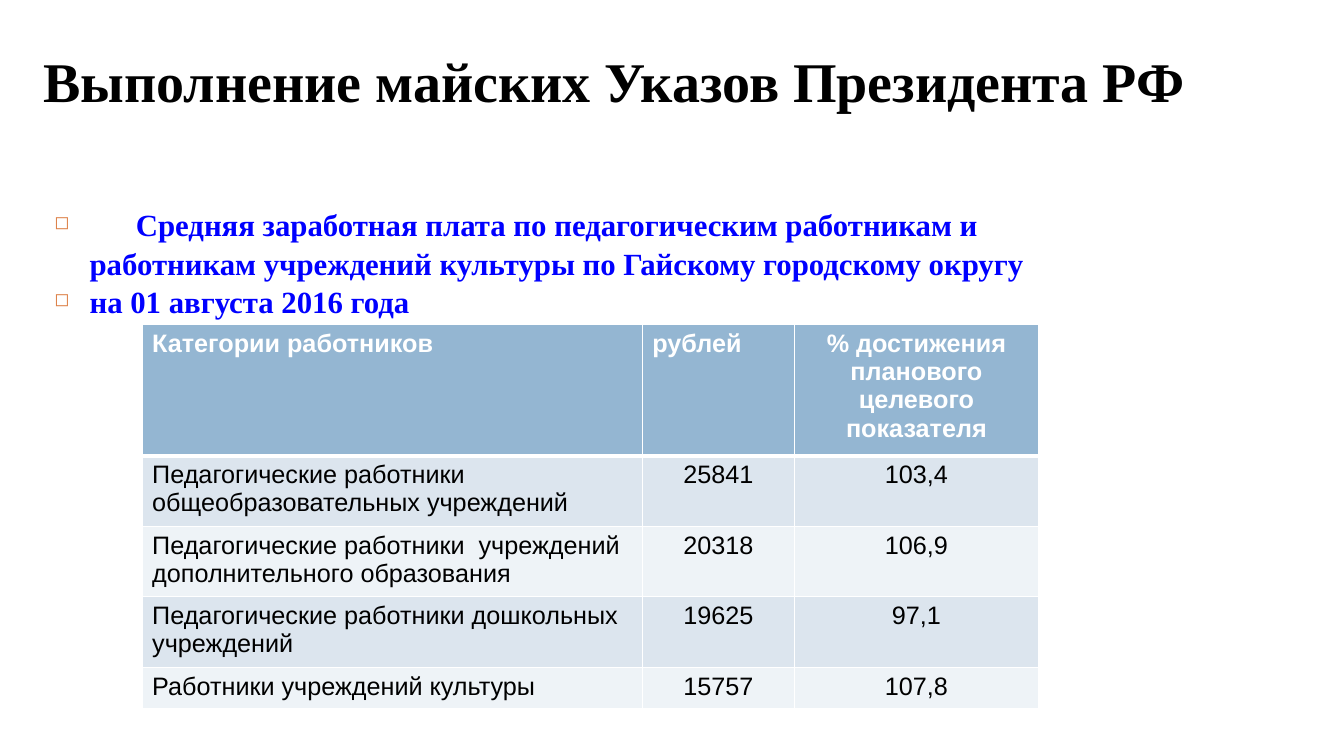
from lxml import etree
from pptx import Presentation
from pptx.dml.color import RGBColor
from pptx.enum.text import MSO_ANCHOR, PP_ALIGN
from pptx.oxml.ns import qn
from pptx.util import Inches, Pt

TITLE = "Выполнение майских Указов Президента РФ"
SUBTITLE = [
    "\tСредняя заработная плата по педагогическим работникам и работникам "
    "учреждений культуры по Гайскому городскому округу",
    "на 01 августа 2016 года",
]
ROWS = [
    ("Категории работников", "рублей", "% достижения планового целевого показателя"),
    ("Педагогические работники общеобразовательных учреждений", "25841", "103,4"),
    ("Педагогические работники  учреждений дополнительного образования", "20318", "106,9"),
    ("Педагогические работники дошкольных учреждений", "19625", "97,1"),
    ("Работники учреждений культуры", "15757", "107,8"),
]
COL_WIDTHS = [4.96, 1.51, 2.42]
ROW_HEIGHTS = [1.21, 0.67, 0.67, 0.67, 0.41]
HEADER_FILL, BAND_FILLS = "94B6D2", ("EEF3F7", "DCE5EE")
TITLE_FONT = dict(name="Times New Roman", size=Pt(40), bold=True)
SUBTITLE_FONT = dict(name="Times New Roman", size=Pt(22), bold=True)
HEADER_FONT = dict(name="Arial", size=Pt(18), bold=True)
CELL_FONT = dict(name="Arial", size=Pt(18), bold=False)


def rgb(value):
    return RGBColor.from_string(value)


def write(p, text, font, color):
    r = p.add_run()
    r.text = text
    for key, value in font.items():
        setattr(r.font, key, value)
    r.font.color.rgb = rgb(color)


def add_text(s, left, top, width, height, anchor):
    tf = s.shapes.add_textbox(*map(Inches, (left, top, width, height))).text_frame
    tf.word_wrap = True
    tf.vertical_anchor = anchor
    return tf


def add_bullet(p, char, color, percent, indent, tab):
    """Give the paragraph a hanging bullet and one tab stop."""
    pPr = p._p.get_or_add_pPr()
    pPr.set("marL", str(Inches(indent)))
    pPr.set("indent", str(-Inches(indent)))
    clr = etree.SubElement(pPr, qn("a:buClr"))
    etree.SubElement(clr, qn("a:srgbClr"), val=color)
    etree.SubElement(pPr, qn("a:buSzPct"), val=str(percent * 1000))
    etree.SubElement(pPr, qn("a:buChar"), char=char)
    tabs = etree.SubElement(pPr, qn("a:tabLst"))
    etree.SubElement(tabs, qn("a:tab"), pos=str(Inches(tab)), algn="l")


def add_borders(cell, bottom):
    """Draw white cell edges; the bottom width is in points."""
    tcPr = cell._tc.get_or_add_tcPr()
    for i, (side, width) in enumerate(dict(lnL=1, lnR=1, lnT=1, lnB=bottom).items()):
        ln = etree.Element(qn(f"a:{side}"), w=str(Pt(width)))
        fill = etree.SubElement(ln, qn("a:solidFill"))
        etree.SubElement(fill, qn("a:srgbClr"), val="FFFFFF")
        tcPr.insert(i, ln)


def add_salary_table(s):
    table = s.shapes.add_table(
        len(ROWS), len(COL_WIDTHS), Inches(1.41), Inches(3.22),
        Inches(sum(COL_WIDTHS)), Inches(sum(ROW_HEIGHTS))).table
    for column, width in zip(table.columns, COL_WIDTHS):
        column.width = Inches(width)
    for i, (values, height) in enumerate(zip(ROWS, ROW_HEIGHTS)):
        table.rows[i].height = Inches(height)
        header = i == 0
        for j, value in enumerate(values):
            cell = table.cell(i, j)
            cell.fill.solid()
            cell.fill.fore_color.rgb = rgb(HEADER_FILL if header else BAND_FILLS[i % 2])
            add_borders(cell, 3 if header else 1)
            p = cell.text_frame.paragraphs[0]
            centred = j == 2 or (j == 1 and not header)
            p.alignment = PP_ALIGN.CENTER if centred else PP_ALIGN.LEFT
            write(p, value, HEADER_FONT if header else CELL_FONT,
                  "FFFFFF" if header else "000000")


def main():
    prs = Presentation()
    prs.slide_width, prs.slide_height = Inches(13.33), Inches(7.5)
    s = prs.slides.add_slide(prs.slide_layouts[6])

    title = add_text(s, 0.33, 0.25, 12.45, 1.08, MSO_ANCHOR.MIDDLE)
    write(title.paragraphs[0], TITLE, TITLE_FONT, "000000")

    subtitle = add_text(s, 0.44, 1.98, 10.38, 4.4, MSO_ANCHOR.TOP)
    for i, text in enumerate(SUBTITLE):
        p = subtitle.add_paragraph() if i else subtitle.paragraphs[0]
        p.line_spacing = 1.04
        add_bullet(p, "◻", "DD8047", 60, indent=0.35, tab=0.81)
        write(p, text, SUBTITLE_FONT, "0000FF")

    add_salary_table(s)
    prs.save("out.pptx")


if __name__ == "__main__":
    main()
